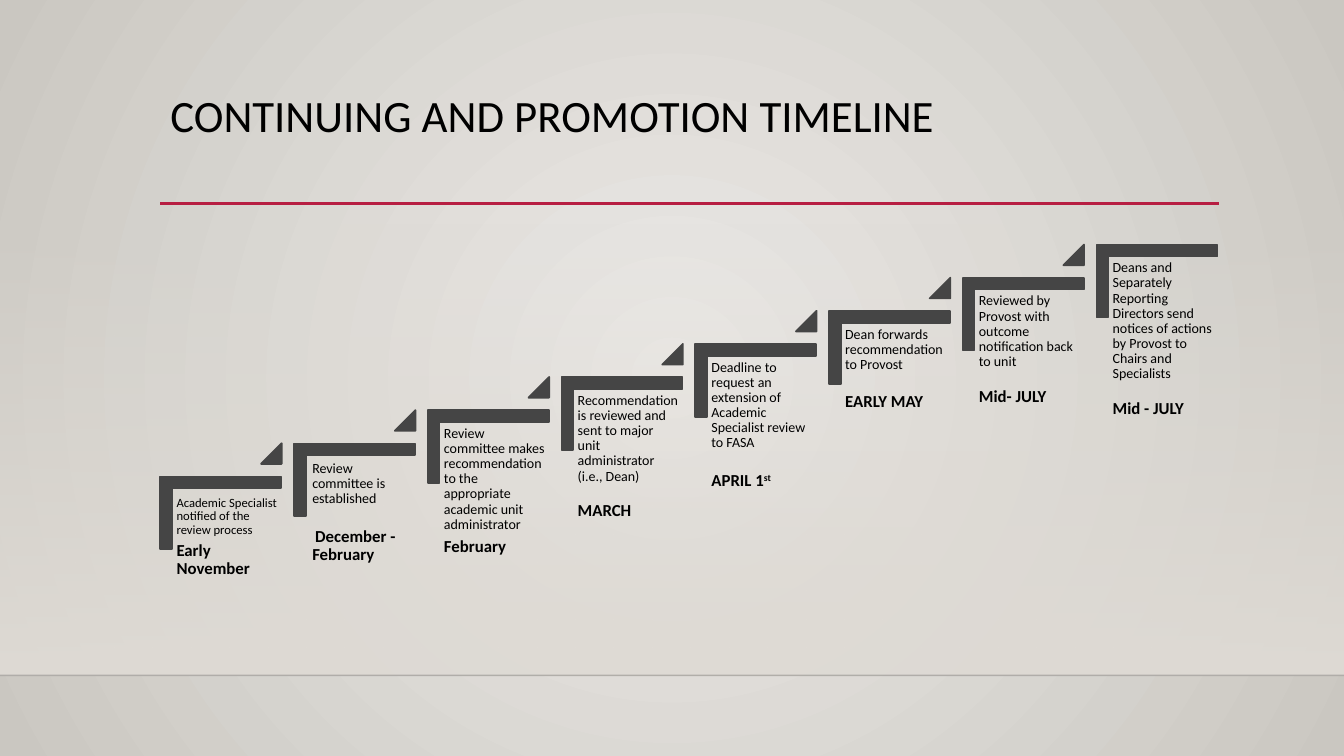
"""Build the continuing and promotion timeline slide."""
from lxml.etree import SubElement
from pptx import Presentation
from pptx.dml.color import RGBColor
from pptx.enum.shapes import MSO_CONNECTOR, MSO_SHAPE
from pptx.enum.text import MSO_ANCHOR, MSO_AUTO_SIZE, PP_ALIGN
from pptx.oxml.ns import qn
from pptx.util import Cm, Pt

TITLE = "CONTINUING AND PROMOTION TIMELINE"
STEPS = [
    {"note": "Academic Specialist notified of the review process",
     "date": "Early November", "size": 9, "gap": 3.5, "down": 0.1},
    {"note": "Review committee is established",
     "date": "December - February", "gap": 15, "right": 0.05, "down": 0.05, "indent": 2},
    {"note": "Review committee makes recommendation to the appropriate academic unit administrator",
     "date": "February", "gap": 4},
    {"note": "Recommendation is reviewed and sent to major unit administrator (i.e., Dean)",
     "date": "MARCH", "gap": 13},
    {"note": "Deadline to request an extension of Academic Specialist review to FASA",
     "date": "APRIL 1", "raised": "st", "gap": 15},
    {"note": "Dean forwards recommendation to Provost",
     "date": "EARLY MAY", "gap": 15},
    {"note": "Reviewed by Provost with outcome notification back to unit",
     "date": "Mid- JULY", "gap": 13},
    {"note": "Deans and Separately Reporting Directors send notices of actions by Provost to Chairs and Specialists",
     "date": "Mid - JULY", "gap": 13},
]
WIDE, HIGH = 33.87, 19.05
FLOOR = 17.02
LEFT, BASE = 4.65, 11.4
RUN, RISE = 3.37, 5.84 / 7
GREY, RED, BLACK = "454545", "B71E42", "000000"
FRAME = {"word_wrap": True, "auto_size": MSO_AUTO_SIZE.NONE, "vertical_anchor": MSO_ANCHOR.TOP}
INSET = {f"margin_{side}": Cm(0.1) for side in ("left", "top", "right", "bottom")}


def tint(code):
    return RGBColor.from_string(code)


def apply(item, form):
    for name, value in form.items():
        setattr(item, name, value)


def box(x, y, w, h):
    return [Cm(n) for n in (x, y, w, h)]


def fade(root, alpha):
    for color in root.iter(qn("a:srgbClr")):
        SubElement(color, qn("a:alpha"), val=str(alpha * 1000))
        break


def blend(fill, first, last):
    fill.gradient()
    for stop, code in zip(fill.gradient_stops, (first, last)):
        stop.color.rgb = tint(code)


def rule(slide, x1, x2, y, code, width):
    line = slide.shapes.add_connector(MSO_CONNECTOR.STRAIGHT, Cm(x1), Cm(y), Cm(x2), Cm(y))
    line.line.color.rgb = tint(code)
    line.line.width = Pt(width)
    SubElement(line._element.spPr, qn("a:effectLst"))
    return line


def write(para, text, size, bold=False):
    run = para.add_run()
    run.text = text
    apply(run.font, {"name": "Calibri", "size": Pt(size), "bold": bold})
    run.font.color.rgb = tint(BLACK)
    return run


def solid(slide, kind, place, points, turn=0):
    shape = slide.shapes.add_shape(kind, *box(*place))
    shape.shadow.inherit = False
    shape.rotation = turn
    for spot, value in enumerate(points):
        shape.adjustments[spot] = value
    shape.fill.solid()
    shape.fill.fore_color.rgb = tint(GREY)
    shape.line.color.rgb = tint(GREY)
    shape.line.width = Pt(1.25)


def label(slide, x, y, step):
    frame = slide.shapes.add_textbox(*box(x, y, 2.74, 2.41)).text_frame
    apply(frame, FRAME | INSET)
    note, date = frame.paragraphs[0], frame.add_paragraph()
    apply(note, {"line_spacing": 0.9})
    apply(date, {"line_spacing": 0.9, "space_before": Pt(step["gap"])})
    write(note, step["note"], step.get("size", 10))
    if "indent" in step:
        date._p.get_or_add_pPr().set("indent", str(Pt(step["indent"])))
    write(date, step["date"], 12, True)
    if "raised" in step:
        write(date, step["raised"], 12, True).font._element.set("baseline", "30000")


def backdrop(slide):
    blend(slide.background.fill, "ECEAE7", "CAC7C1")
    grad = next(slide._element.iter(qn("a:gradFill")))
    grad.remove(grad.find(qn("a:lin")))
    ring = SubElement(grad, qn("a:path"), path="circle")
    SubElement(ring, qn("a:fillToRect"), l="50000", t="50000", r="50000", b="50000")
    wall = slide.shapes.add_shape(MSO_SHAPE.RECTANGLE, *box(0, 5.61, WIDE, FLOOR - 5.61))
    wall.shadow.inherit = False
    blend(wall.fill, "DFDBD5", "DFDBD5")
    wall.fill.gradient_angle = 270
    fade(wall._element.spPr, 0)
    wall.line.fill.background()
    fade(rule(slide, 0, WIDE, FLOOR, "000001", 1)._element.spPr, 20)
    rule(slide, 4.04, 30.73, 5.13, RED, 2.5)


def heading(slide):
    title = slide.shapes.title
    apply(title, dict(zip(("left", "top", "width", "height"), box(4.04, 2.24, 26.67, 2.92))))
    apply(title.text_frame, FRAME)
    para = title.text_frame.paragraphs[0]
    apply(para, {"alignment": PP_ALIGN.LEFT, "line_spacing": 0.9})
    write(para, TITLE, 32)


def main():
    deck = Presentation()
    apply(deck, {"slide_width": Cm(WIDE), "slide_height": Cm(HIGH)})
    slide = deck.slides.add_slide(deck.slide_layouts[5])
    backdrop(slide)
    heading(slide)
    for rank, step in enumerate(STEPS):
        x, y = LEFT + rank * RUN, BASE - rank * RISE
        solid(slide, MSO_SHAPE.CORNER, (x, y, 1.83, 3.05), (0.161, 0.161), 90)
        label(slide, x - 0.3 + step.get("right", 0), y + 0.91 + step.get("down", 0), step)
        if rank < len(STEPS) - 1:
            solid(slide, MSO_SHAPE.ISOSCELES_TRIANGLE, (x + 1.93, y - 0.23, 0.52, 0.52), (1,))
    deck.save("out.pptx")


if __name__ == "__main__":
    main()
